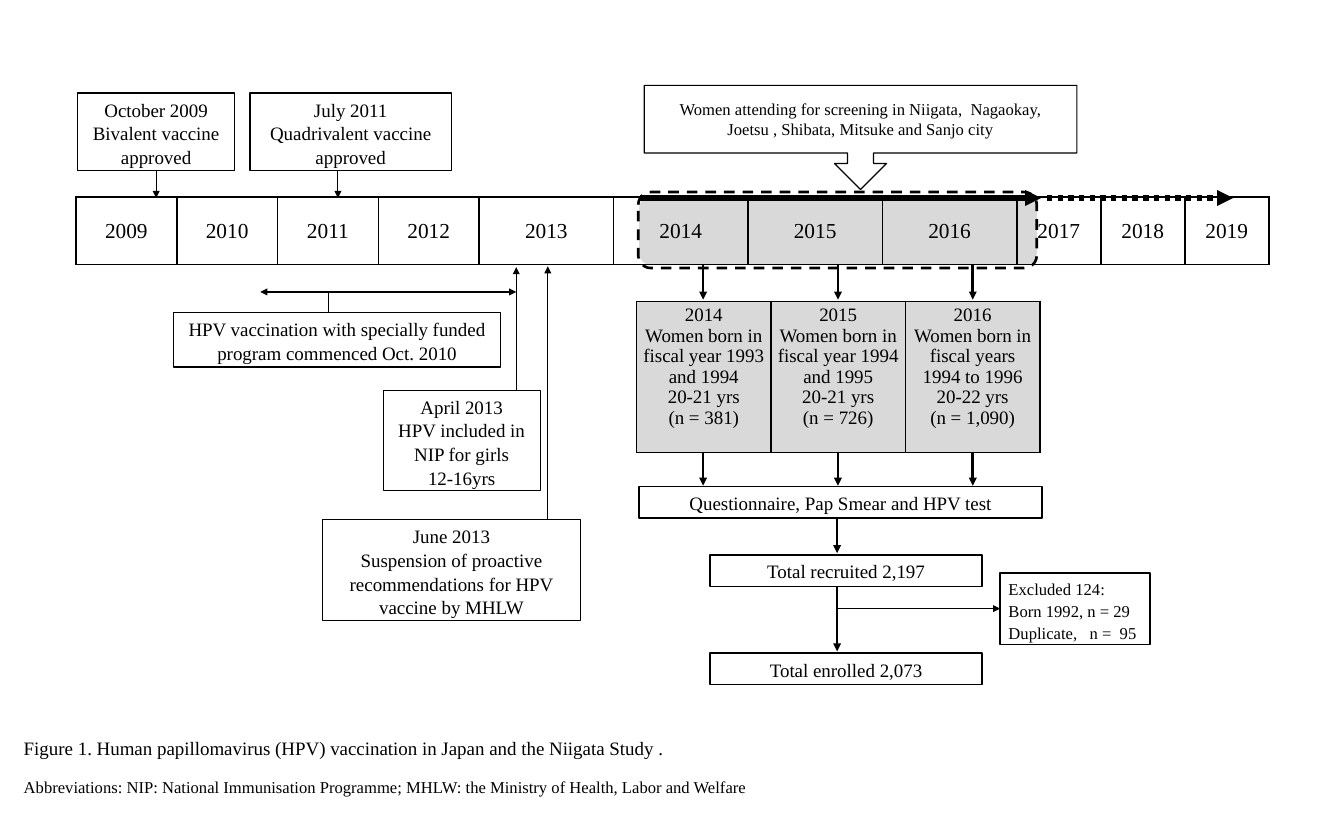
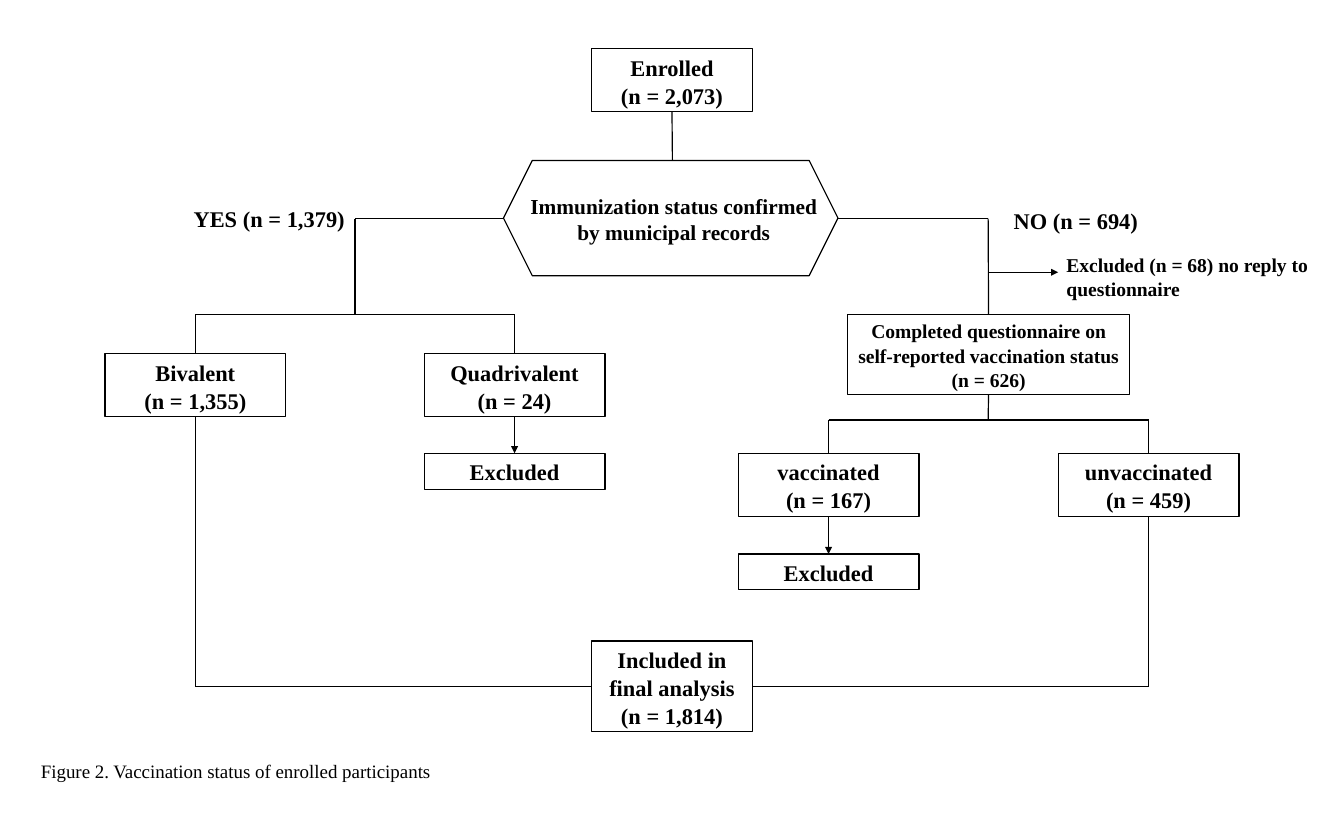
import pptx
import pptx.util
import pptx.dml.color
import pptx.enum.dml
import pptx.enum.shapes
import pptx.enum.text
import pptx.oxml
import pptx.oxml.ns
from lxml import etree

Inches, Pt = pptx.util.Inches, pptx.util.Pt
SHAPE = pptx.enum.shapes.MSO_SHAPE
DASH = pptx.enum.dml.MSO_LINE
ALIGN = pptx.enum.text.PP_ALIGN
ANCHOR = pptx.enum.text.MSO_ANCHOR
COLOR = {"ink": "000000", "paper": "FFFFFF", "shade": "D9D9D9"}
FONT = "Times New Roman"
TOP, LEFT, BOTTOM, RIGHT = range(4)

# Figure 1: name, place, outline width, text
EVENTS = [
    ("bivalent", (0.91, 1.09, 1.84, 0.91), 1, "October 2009\nBivalent vaccine approved"),
    ("quad", (2.93, 1.09, 2.36, 0.91), 1, "July 2011\nQuadrivalent vaccine approved"),
    ("funded", (2.03, 3.66, 3.84, 0.64), 1,
     "HPV vaccination with specially funded\nprogram commenced Oct. 2010"),
    ("nip", (4.49, 4.57, 1.84, 1.18), 1, "April 2013\nHPV included in NIP for girls\n12-16yrs"),
    ("halt", (3.78, 6.09, 3.02, 1.18), 1,
     "June 2013\nSuspension of proactive recommendations for HPV vaccine by MHLW"),
    ("tests", (7.49, 5.7, 4.72, 0.37), 1.5, "Questionnaire, Pap Smear and HPV test"),
    ("total", (8.32, 6.5, 3.19, 0.37), 1.5, "Total recruited 2,197"),
    ("final", (8.32, 7.65, 3.19, 0.37), 1.5, "Total enrolled 2,073"),
]
UNIT = 13.98 / 71
YEARS = [(str(2009 + i), n * UNIT) for i, n in enumerate([6] * 4 + [8] * 4 + [5] * 3)]
GROUPS = [
    ("2014\nWomen born in fiscal year 1993 and 1994\n20-21 yrs\n(n = 381)", 8 * UNIT),
    ("2015\nWomen born in fiscal year 1994 and 1995\n20-21 yrs\n(n = 726)", 8 * UNIT),
    ("2016\nWomen born in fiscal years 1994 to 1996\n20-22 yrs\n(n = 1,090)", 8 * UNIT),
]
# An end is a point, or a box name with a side
LINKS = [
    (("bivalent", BOTTOM), (1.83, 2.32), "tail"),
    ((3.96, 2), (3.96, 2.32), "tail"),
    ((3.05, 3.42), (6.05, 3.42), "head tail"),
    ((3.85, 3.42), (3.85, 3.66), ""),
    ((6.05, 4.57), (6.05, 3.13), "tail"),
    ((6.42, 6.09), (6.42, 3.12), "tail"),
    ((9.81, 7.13), ("out", LEFT), "tail"),
]
STEPS = [(x, y, y + 0.4) for y in (3.11, 5.29) for x in (8.24, 9.82, 11.4)]
STEPS += [(9.81, 6.08, 6.48), (9.81, 6.88, 7.63)]

# Figure 2: name, place, size, text
FLOW = [
    ("start", (6.93, 0.57, 1.89, 0.74), 18.9, "Enrolled\n(n = 2,073)"),
    ("two", (1.23, 4.14, 2.12, 0.74), 18.9, "Bivalent\n(n = 1,355)"),
    ("four", (4.97, 4.14, 2.12, 0.74), 18.9, "Quadrivalent\n(n = 24)"),
    ("drop", (4.97, 5.31, 2.12, 0.42), 18.9, "Excluded"),
    ("form", (9.93, 3.68, 3.31, 0.94), 16.5,
     "Completed questionnaire on self-reported vaccination status\n(n = 626)"),
    ("vac", (8.65, 5.31, 2.12, 0.74), 18.9, "vaccinated\n(n = 167)"),
    ("unvac", (12.4, 5.31, 2.12, 0.74), 18.9, "unvaccinated\n(n = 459)"),
    ("omit", (8.65, 6.49, 2.12, 0.42), 18.9, "Excluded"),
    ("end", (6.93, 7.51, 1.89, 1.06), 18.9, "Included in final analysis\n(n = 1,814)"),
]
LABELS = [
    ((6.02, 2.2, 3.75, 0.71), 18, ALIGN.CENTER,
     "Immunization status confirmed by municipal records"),
    ((2.17, 2.34, 1.99, 0.42), 18.9, ALIGN.LEFT, "YES (n = 1,379)"),
    ((11.78, 2.36, 2.12, 0.42), 18.9, ALIGN.LEFT, "NO (n = 694)"),
    ((12.4, 2.9, 3.04, 0.66), 16.5, ALIGN.LEFT, "Excluded (n = 68) no reply to questionnaire"),
]
PATHS = [
    (("start", BOTTOM), (7.88, 1.88), ""),
    ((5.9, 2.56), (4.16, 2.56), ""),
    ((4.16, 2.56), (4.16, 3.68), ""),
    ((2.29, 3.68), (6.03, 3.68), ""),
    ((2.29, 3.68), ("two", TOP), ""),
    ((6.03, 3.68), ("four", TOP), ""),
    (("four", BOTTOM), ("drop", TOP), "tail"),
    ((9.82, 2.56), (11.58, 2.56), ""),
    ((11.58, 2.56), ("form", TOP), ""),
    (("form", BOTTOM), (11.58, 4.92), ""),
    ((9.71, 4.92), (13.46, 4.92), ""),
    ((9.71, 4.92), ("vac", TOP), ""),
    ((13.46, 4.92), ("unvac", TOP), ""),
    (("vac", BOTTOM), ("omit", TOP), "tail"),
    (("two", BOTTOM), (2.29, 8.04), ""),
    ((2.29, 8.04), ("end", LEFT), ""),
    (("unvac", BOTTOM), (13.46, 8.04), ""),
    ((13.46, 8.04), ("end", RIGHT), ""),
]


def rgb(name):
    return pptx.dml.color.RGBColor.from_string(COLOR[name])


def write(frame, text, size=16, bold=False, align=ALIGN.CENTER, lead=1.04,
          anchor=ANCHOR.TOP, wrap=True):
    """Fill a shape's or a cell's text frame, one paragraph a line."""
    frame.word_wrap = wrap
    frame.vertical_anchor = anchor
    for i, row in enumerate(text.split("\n")):
        para = frame.add_paragraph() if i else frame.paragraphs[0]
        para.alignment, para.line_spacing = align, lead
        run = para.add_run()
        run.text = row
        font = run.font
        font.name, font.size, font.bold = FONT, Pt(size), bold
        font.color.rgb = rgb("ink")


def label(slide, place, text, **form):
    box = slide.shapes.add_textbox(*map(Inches, place))
    write(box.text_frame, text, **form)


def box(slide, place, text="", kind=SHAPE.RECTANGLE, fill=None, width=1, dash=None, **form):
    shape = slide.shapes.add_shape(kind, *map(Inches, place))
    shape.shadow.inherit = False
    if fill:
        shape.fill.solid()
        shape.fill.fore_color.rgb = rgb(fill)
    else:
        shape.fill.background()
    if width:
        shape.line.color.rgb = rgb("ink")
        shape.line.width = Pt(width)
        if dash:
            shape.line.dash_style = dash
    else:
        shape.line.fill.background()
    if text:
        write(shape.text_frame, text, **form)
    return shape


def mid(shape, side):
    """Middle of one side of a shape."""
    x, y, w, h = shape.left, shape.top, shape.width, shape.height
    return [(x + w // 2, y), (x, y + h // 2), (x + w // 2, y + h), (x + w, y + h // 2)][side]


def link(slide, start, end, heads="", width=1, dash=None, boxes=None):
    ends = [(boxes[a], b) if isinstance(a, str) else None for a, b in (start, end)]
    spots = [mid(*e) if e else tuple(map(Inches, p)) for e, p in zip(ends, (start, end))]
    line = slide.shapes.add_connector(
        pptx.enum.shapes.MSO_CONNECTOR.STRAIGHT, *spots[0], *spots[1])
    if ends[0]:
        line.begin_connect(*ends[0])
    if ends[1]:
        line.end_connect(*ends[1])
    line.line.color.rgb = rgb("ink")
    line.line.width = Pt(width)
    if dash:
        line.line.dash_style = dash
    qn = pptx.oxml.ns.qn
    props = line.line._get_or_add_ln()
    for tip in heads.split():
        etree.SubElement(props, qn(f"a:{tip}End")).set("type", "triangle")
    etree.SubElement(line._element.spPr, qn("a:effectLst"))


def grid(slide, x, y, high, cells, fill=None, **form):
    """One-row table with ruled cells given as (text, width)."""
    total = sum(w for _, w in cells)
    table = slide.shapes.add_table(
        1, len(cells), Inches(x), Inches(y), Inches(total), Inches(high)).table
    table.first_row = table.horz_banding = False
    table.rows[0].height = Inches(high)
    for i, (text, wide) in enumerate(cells):
        table.columns[i].width = Inches(wide)
        cell = table.cell(0, i)
        cell.margin_left = cell.margin_right = Inches(0.08)
        write(cell.text_frame, text, **form)
        cell.vertical_anchor = form.get("anchor", ANCHOR.TOP)
        props = cell._tc.get_or_add_tcPr()
        for side in "LRTB":
            props.append(pptx.oxml.parse_xml(
                f'<a:ln{side} {pptx.oxml.ns.nsdecls("a")} w="{Pt(1.5)}"><a:solidFill>'
                f'<a:srgbClr val="{COLOR["ink"]}"/></a:solidFill></a:ln{side}>'))
        if fill:
            cell.fill.solid()
            cell.fill.fore_color.rgb = rgb(fill)
        else:
            cell.fill.background()


def caption(slide, x, y, text, size=16):
    label(slide, (x, y, 15, 0.37), text, size=size, align=ALIGN.LEFT, lead=1, wrap=False)


def study(slide):
    box(slide, (7.49, 2.31, 4.66, 0.79), kind=SHAPE.ROUNDED_RECTANGLE, fill="shade", width=0)
    grid(slide, 0.89, 2.31, 0.79, YEARS, size=18, lead=1, anchor=ANCHOR.MIDDLE)
    link(slide, (7.5, 2.32), (12.2, 2.32), "tail", width=4.5)
    link(slide, (12.27, 2.32), (14.45, 2.32), "tail", width=4.5, dash=DASH.ROUND_DOT)
    box(slide, (7.48, 2.25, 4.67, 0.89), kind=SHAPE.ROUNDED_RECTANGLE, width=2.25,
        dash=DASH.DASH)
    boxes = {name: box(slide, place, text, width=width)
             for name, place, width, text in EVENTS}
    boxes["out"] = box(slide, (11.72, 6.71, 1.76, 0.84),
                       "Excluded 124:\nBorn 1992, n = 29\nDuplicate,   n =  95",
                       width=1.5, size=14, align=ALIGN.LEFT, lead=1.1)
    box(slide, (7.55, 1, 5.07, 1.22),
        "Women attending for screening in Niigata,  Nagaokay, Joetsu , "
        "Shibata, Mitsuke and Sanjo city",
        kind=SHAPE.DOWN_ARROW_CALLOUT, fill="paper", size=14, lead=1, anchor=ANCHOR.MIDDLE)
    grid(slide, 7.46, 3.53, 1.77, GROUPS, fill="shade", lead=0.97)
    for start, end, heads in LINKS:
        link(slide, start, end, heads, boxes=boxes)
    for x, y, stop in STEPS:
        link(slide, (x, y), (x, stop), "tail", width=2.25)
    caption(slide, 0.18, 8.58, "Figure 1. Human papillomavirus (HPV) vaccination in Japan "
            "and the Niigata Study .")
    caption(slide, 0.18, 9.05, "Abbreviations: NIP: National Immunisation Programme; "
            "MHLW: the Ministry of Health, Labor and Welfare", size=14)


def status(slide):
    boxes = {name: box(slide, place, text, fill="paper", size=size, bold=True)
             for name, place, size, text in FLOW}
    box(slide, (5.9, 1.88, 3.92, 1.35), kind=SHAPE.HEXAGON)
    for place, size, align, text in LABELS:
        label(slide, place, text, size=size, bold=True, align=align)
    for start, end, heads in PATHS:
        link(slide, start, end, heads, boxes=boxes)
    link(slide, (11.58, 3.19), (12.4, 3.19), "tail", width=0.5)
    caption(slide, 0.38, 8.85, "Figure 2. Vaccination status of enrolled participants")


def main():
    deck = pptx.Presentation()
    deck.slide_width, deck.slide_height = Inches(15.75), Inches(9.84)
    for draw in (study, status):
        draw(deck.slides.add_slide(deck.slide_layouts[6]))
    deck.save("out.pptx")


if __name__ == "__main__":
    main()
